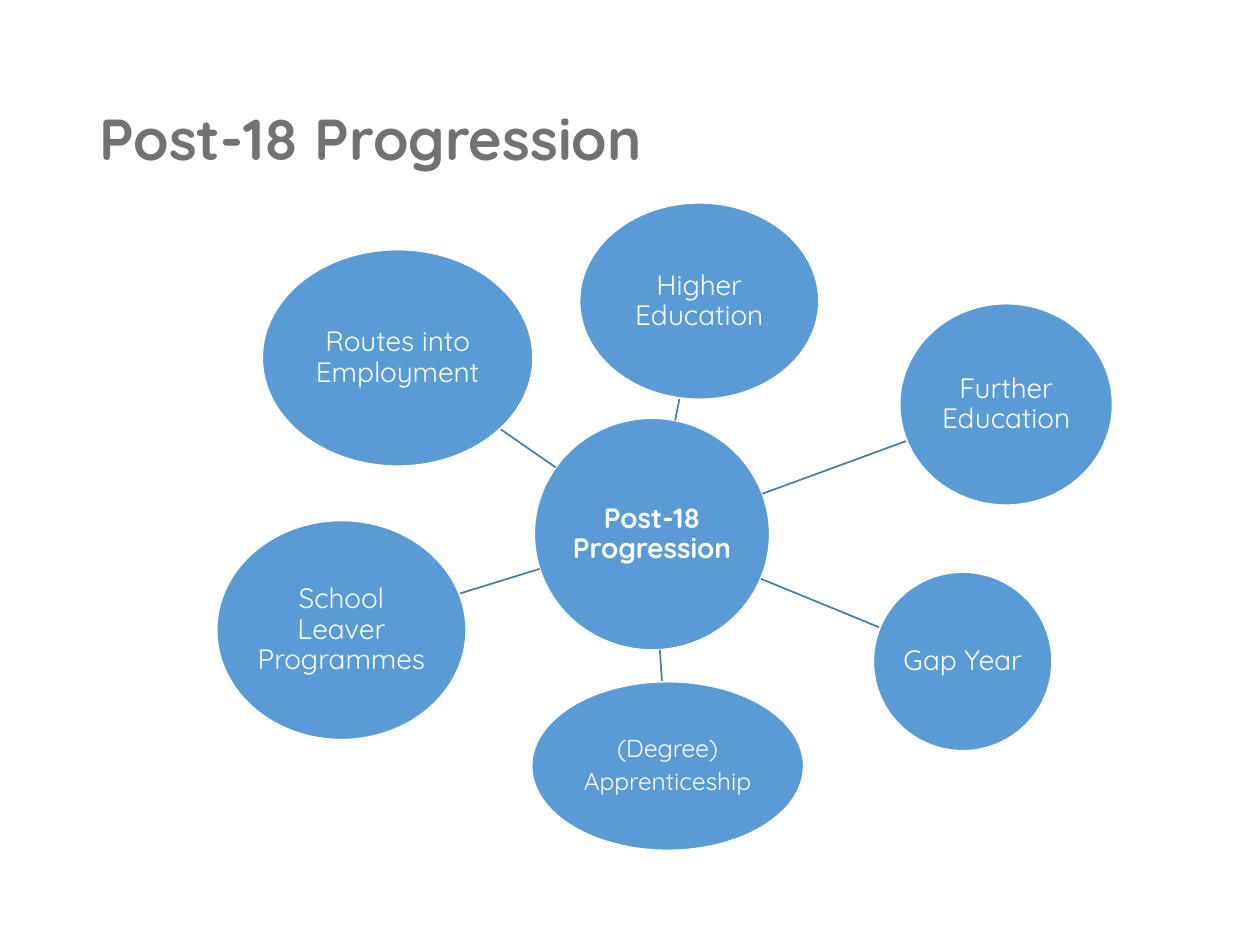
"""Build the Post-18 Progression slide: a hub with six linked options."""
import math

import lxml.etree
import pptx
import pptx.dml.color
import pptx.enum.shapes
import pptx.enum.text
import pptx.oxml.ns
import pptx.util

Pt = pptx.util.Pt
BLUE = pptx.dml.color.RGBColor(0x5B, 0x9B, 0xD5)
LINK_BLUE = pptx.dml.color.RGBColor(0x49, 0x7C, 0xAB)
GREY = pptx.dml.color.RGBColor(0x76, 0x71, 0x71)
WHITE = pptx.dml.color.RGBColor(0xFF, 0xFF, 0xFF)
FONT = "Quicksand"

HUB = (305.3, 239, 134.6, 132.5)
OPTIONS = [
    (["Higher Education"], 16, (331.2, 115.9, 136.8, 112.3)),
    (["Further Education"], 16, (514.1, 173.5, 121.7, 115.2)),
    (["Gap Year"], 16, (499, 326.9, 102.2, 102.2)),
    (["(Degree)", "Apprenticeship"], 14, (303.8, 389.5, 155.5, 96.5)),
    (["School Leaver Programmes"], 16, (123.8, 297.4, 142.6, 125.3)),
    (["Routes into Employment"], 16, (149.8, 142.6, 154.8, 123.8)),
]


def write_paragraphs(frame, texts, size, color, bold, align):
    """Fill a text frame with one run per paragraph, centred vertically."""
    frame.word_wrap = True
    frame.vertical_anchor = pptx.enum.text.MSO_ANCHOR.MIDDLE
    for index, text in enumerate(texts):
        para = frame.add_paragraph() if index else frame.paragraphs[0]
        para.alignment = align
        para.line_spacing = 0.9
        if index:
            para.space_before = Pt(4)
        span = para.add_run()
        span.text = text
        span.font.name = FONT
        span.font.size = Pt(size)
        span.font.bold = bold
        span.font.color.rgb = color


def add_title(slide, text):
    """Add the slide heading."""
    box = slide.shapes.add_textbox(Pt(49.7), Pt(28.8), Pt(620.6), Pt(104.4))
    write_paragraphs(box.text_frame, [text], 33, GREY, True, pptx.enum.text.PP_ALIGN.LEFT)


def add_bubble(slide, texts, size, bounds, bold=False):
    """Add a blue ellipse with a centred white label."""
    bubble = slide.shapes.add_shape(
        pptx.enum.shapes.MSO_SHAPE.OVAL, *[Pt(length) for length in bounds])
    bubble.shadow.inherit = False
    bubble.fill.solid()
    bubble.fill.fore_color.rgb = BLUE
    bubble.line.color.rgb = WHITE
    bubble.line.width = Pt(1)
    frame = bubble.text_frame
    frame.margin_left = frame.margin_right = Pt(0.8)
    frame.margin_top = frame.margin_bottom = Pt(0.8)
    write_paragraphs(frame, texts, size, WHITE, bold, pptx.enum.text.PP_ALIGN.CENTER)


def center(bounds):
    """Return the middle of a left, top, width, height box."""
    left, top, width, height = bounds
    return left + width / 2, top + height / 2


def edge_point(bounds, target):
    """Return where the ray from an ellipse's centre to a target leaves the ellipse."""
    x, y = center(bounds)
    across, down = target[0] - x, target[1] - y
    scale = 1 / math.hypot(across / (bounds[2] / 2), down / (bounds[3] / 2))
    return x + across * scale, y + down * scale


def add_link(slide, start_bounds, end_bounds):
    """Join two ellipses, edge to edge, along the line between their centres."""
    start = edge_point(start_bounds, center(end_bounds))
    end = edge_point(end_bounds, center(start_bounds))
    link = slide.shapes.add_connector(
        pptx.enum.shapes.MSO_CONNECTOR.STRAIGHT,
        *[Pt(length) for length in start + end])
    link.line.color.rgb = LINK_BLUE
    link.line.width = Pt(1)
    properties = link._element.spPr
    lxml.etree.SubElement(properties, pptx.oxml.ns.qn("a:effectLst"))


def main():
    """Build and save the deck."""
    deck = pptx.Presentation()
    deck.slide_width, deck.slide_height = Pt(720), Pt(540)
    slide = deck.slides.add_slide(deck.slide_layouts[6])
    add_title(slide, "Post-18 Progression")
    add_bubble(slide, ["Post-18 Progression"], 16, HUB, bold=True)
    for texts, size, bounds in OPTIONS:
        add_link(slide, HUB, bounds)
        add_bubble(slide, texts, size, bounds)
    deck.save("out.pptx")


if __name__ == "__main__":
    main()
